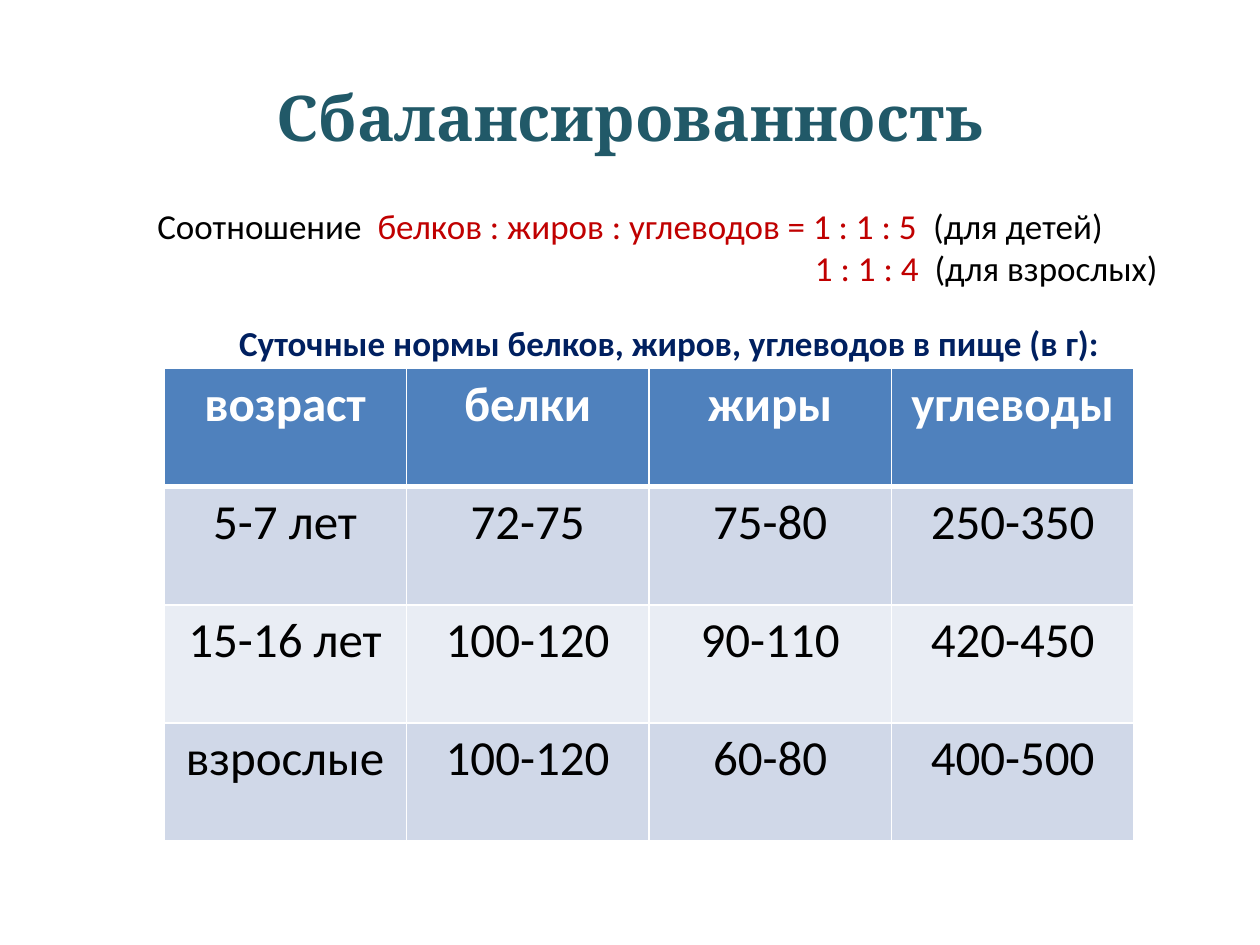
import dataclasses

import lxml.etree
import pptx
import pptx.dml.color
import pptx.enum.text
import pptx.oxml.ns
import pptx.util

SLIDE_WIDTH = pptx.util.Inches(10)
SLIDE_HEIGHT = pptx.util.Inches(7.5)
ALIGN = pptx.enum.text.PP_ALIGN
ANCHOR = pptx.enum.text.MSO_ANCHOR

TEAL, RED, NAVY = "215968", "C00000", "002060"
BLACK, WHITE = "000000", "FFFFFF"
HEADER_FILL, BAND_FILLS = "4F81BD", ("D0D8E8", "E9EDF4")


@dataclasses.dataclass(frozen=True)
class Area:
    """A rectangle in shares of the slide's width and height."""
    left: float
    top: float
    width: float
    height: float

    def lengths(self) -> tuple[int, int, int, int]:
        return (int(self.left * SLIDE_WIDTH), int(self.top * SLIDE_HEIGHT),
                int(self.width * SLIDE_WIDTH), int(self.height * SLIDE_HEIGHT))


@dataclasses.dataclass(frozen=True)
class Line:
    """One paragraph: pairs of text and colour, with alignment and indent."""
    phrases: tuple[tuple[str, str], ...]
    align: ALIGN = ALIGN.CENTER
    indent: float = 0


TITLE = Line((("Сбалансированность", TEAL),))
RATIOS = (
    Line((("Соотношение  ", BLACK),
          ("белков : жиров : углеводов = 1 : 1 : 5  ", RED),
          ("(для детей)", BLACK))),
    Line((("1 : 1 : 4  ", RED), ("(для взрослых)", BLACK)), ALIGN.LEFT, 5.87),
)
CAPTION = Line((("Суточные нормы белков, жиров, углеводов в пище (в г):", NAVY),),
               ALIGN.LEFT)
NORMS = (
    ("возраст", "белки", "жиры", "углеводы"),
    ("5-7 лет", "72-75", "75-80", "250-350"),
    ("15-16 лет", "100-120", "90-110", "420-450"),
    ("взрослые", "100-120", "60-80", "400-500"),
)


def colour(code: str) -> pptx.dml.color.RGBColor:
    return pptx.dml.color.RGBColor.from_string(code)


def write(frame, *lines: Line, size: float, font: str = "Calibri",
          bold: bool = False) -> None:
    """Fill a text frame with formatted lines."""
    for index, line in enumerate(lines):
        paragraph = frame.add_paragraph() if index else frame.paragraphs[0]
        paragraph.alignment = line.align
        if line.indent:
            properties = paragraph._p.get_or_add_pPr()
            properties.set("marL", str(pptx.util.Inches(line.indent)))
        for words, code in line.phrases:
            run = paragraph.add_run()
            run.text = words
            run.font.name = font
            run.font.size = pptx.util.Pt(size)
            run.font.bold = bold
            run.font.color.rgb = colour(code)


def add_text_area(slide, area: Area, wrap: bool = True,
                  anchor: ANCHOR = ANCHOR.TOP):
    frame = slide.shapes.add_textbox(*area.lengths()).text_frame
    frame.word_wrap = wrap
    frame.vertical_anchor = anchor
    return frame


def set_borders(cell, top: float, bottom: float) -> None:
    """Draw white cell borders; the sides are always 1 pt."""
    properties = cell._tc.get_or_add_tcPr()
    for side, width in (("L", 1), ("R", 1), ("T", top), ("B", bottom)):
        border = lxml.etree.SubElement(
            properties, pptx.oxml.ns.qn(f"a:ln{side}"), w=str(pptx.util.Pt(width)))
        fill = lxml.etree.SubElement(border, pptx.oxml.ns.qn("a:solidFill"))
        lxml.etree.SubElement(fill, pptx.oxml.ns.qn("a:srgbClr"), val=WHITE)


def add_norms_table(slide, area: Area) -> None:
    table = slide.shapes.add_table(
        len(NORMS), len(NORMS[0]), *area.lengths()).table
    for row, values in enumerate(NORMS):
        is_header = row == 0
        for column, value in enumerate(values):
            cell = table.cell(row, column)
            set_borders(cell, top=3 if row == 1 else 1, bottom=3 if is_header else 1)
            cell.fill.solid()
            cell.fill.fore_color.rgb = colour(
                HEADER_FILL if is_header else BAND_FILLS[(row - 1) % 2])
            ink = WHITE if is_header else BLACK
            write(cell.text_frame, Line(((value, ink),)), size=28, bold=is_header)


def main() -> None:
    presentation = pptx.Presentation()
    presentation.slide_width = SLIDE_WIDTH
    presentation.slide_height = SLIDE_HEIGHT
    slide = presentation.slides.add_slide(presentation.slide_layouts[6])

    # Title
    title = add_text_area(slide, Area(0.05, 0.04, 0.9, 1 / 6), anchor=ANCHOR.MIDDLE)
    write(title, TITLE, size=36, font="Cambria", bold=True)

    # Ratios for children and adults
    ratios = add_text_area(slide, Area(0.05, 0.21, 0.9, 0.1))
    write(ratios, *RATIOS, size=20)

    # Daily norms with their caption
    add_norms_table(slide, Area(0.13, 0.39, 0.77, 0.5))
    caption = add_text_area(slide, Area(0.18, 1 / 3, 0.71, 0.06), wrap=False)
    write(caption, CAPTION, size=20, bold=True)

    presentation.save("out.pptx")


if __name__ == "__main__":
    main()
